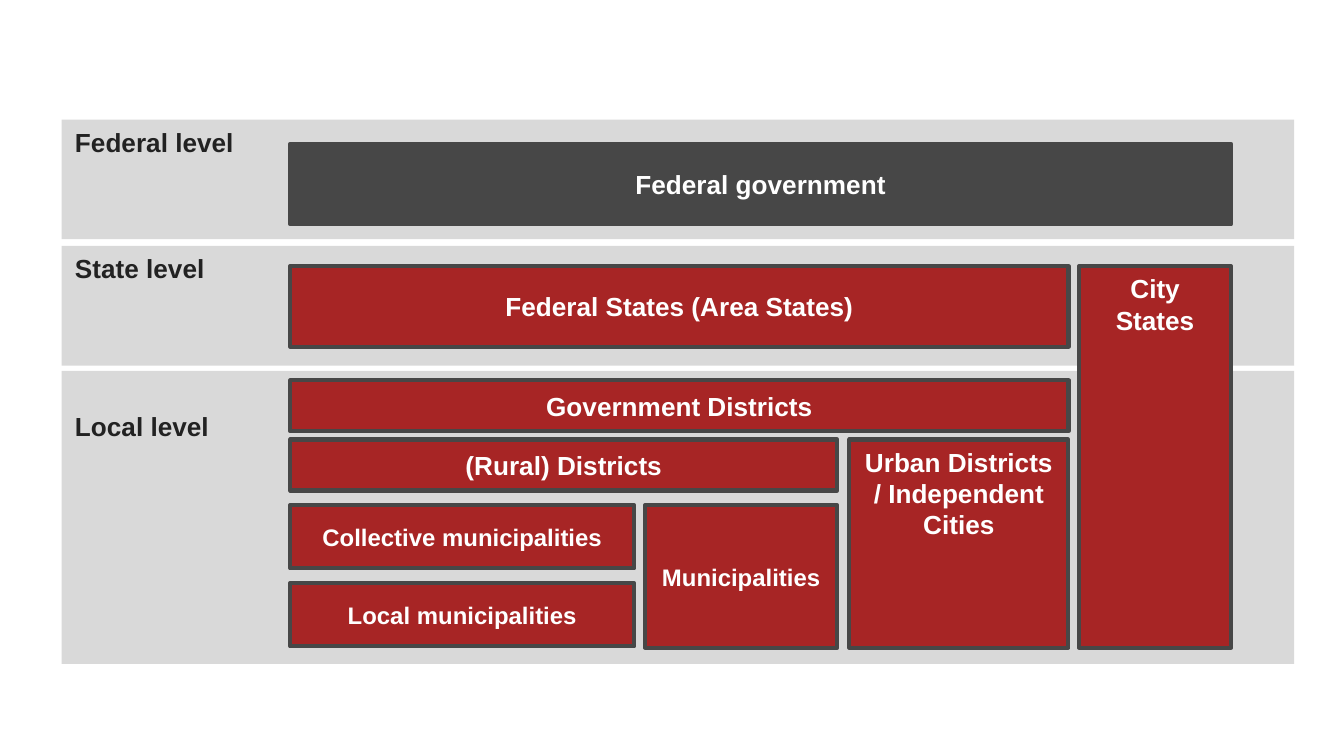
from dataclasses import dataclass

from pptx import Presentation
from pptx.dml.color import RGBColor as RGB
from pptx.enum.shapes import MSO_SHAPE as Shape
from pptx.enum.text import MSO_ANCHOR as Anchor, PP_ALIGN as Align
from pptx.util import Inches, Pt


@dataclass(frozen=True)
class Theme:
    font: str = "Arial"
    band: RGB = RGB(0xD9, 0xD9, 0xD9)
    band_text: RGB = RGB(0x22, 0x22, 0x22)
    dark: RGB = RGB(0x47, 0x47, 0x47)
    red: RGB = RGB(0xA7, 0x25, 0x25)
    box_text: RGB = RGB(0xFF, 0xFF, 0xFF)
    size: float = 14
    small: float = 12.8
    border: float = 2.25


class Diagram:
    def __init__(self, slide, theme):
        self.slide = slide
        self.theme = theme

    def _rectangle(self, text, left, top, right, bottom, fill, color, size, align, anchor):
        shape = self.slide.shapes.add_shape(
            Shape.RECTANGLE, Inches(left), Inches(top),
            Inches(right - left), Inches(bottom - top))
        shape.shadow.inherit = False
        shape.fill.solid()
        shape.fill.fore_color.rgb = fill
        frame = shape.text_frame
        frame.text = text
        frame.word_wrap = True
        frame.vertical_anchor = anchor
        paragraph = frame.paragraphs[0]
        paragraph.alignment = align
        font = paragraph.runs[0].font
        font.name, font.size, font.bold = self.theme.font, Pt(size), True
        font.color.rgb = color
        return shape

    def band(self, text, top, bottom, inset=0.05):
        """Grey level band with its label at the top left."""
        theme = self.theme
        band = self._rectangle(text, 0.46, top, 9.63, bottom, theme.band,
                               theme.band_text, theme.size, Align.LEFT, Anchor.TOP)
        band.line.fill.background()
        band.text_frame.margin_top = Inches(inset)

    def box(self, text, left, top, right, bottom, fill=None, size=None, anchor=Anchor.MIDDLE):
        """Bordered box for one unit of government."""
        theme = self.theme
        box = self._rectangle(text, left, top, right, bottom, fill or theme.red,
                              theme.box_text, size or theme.size, Align.CENTER, anchor)
        box.line.color.rgb = theme.dark
        box.line.width = Pt(theme.border)


def main():
    # 16:9 slide
    presentation = Presentation()
    presentation.slide_width = Inches(10)
    presentation.slide_height = Inches(10 * 9 / 16)
    theme = Theme()
    diagram = Diagram(presentation.slides.add_slide(presentation.slide_layouts[6]), theme)

    # Level bands
    diagram.band("Local level", 2.76, 4.94, inset=0.29)
    diagram.band("State level", 1.83, 2.72)
    diagram.band("Federal level", 0.89, 1.78)

    # Shared edges of the boxes
    left, bottom = 2.16, 4.82
    collective_right, municipal_left = 4.72, 4.8
    rural_right, urban_left = 6.23, 6.32
    area_right, city_left, city_right = 7.95, 8.03, 9.16
    state_top, rural_top, municipal_top = 1.98, 3.27, 3.76

    # Federal and state units
    diagram.box("Federal government", left, 1.07, city_right, 1.67, fill=theme.dark)
    diagram.box("Federal States (Area States)", left, state_top, area_right, 2.58)
    diagram.box("City States", city_left, state_top, city_right, bottom, anchor=Anchor.TOP)

    # Districts
    diagram.box("Government Districts", left, 2.83, area_right, 3.21)
    diagram.box("(Rural) Districts", left, rural_top, rural_right, 3.65)
    diagram.box("Urban Districts / Independent Cities", urban_left, rural_top,
                area_right, bottom, anchor=Anchor.TOP)

    # Municipalities
    diagram.box("Municipalities", municipal_left, municipal_top, rural_right, bottom,
                size=theme.small)
    for text, top in (("Collective municipalities", municipal_top),
                      ("Local municipalities", 4.34)):
        diagram.box(text, left, top, collective_right, top + 0.47, size=theme.small)

    presentation.save("out.pptx")


if __name__ == "__main__":
    main()
